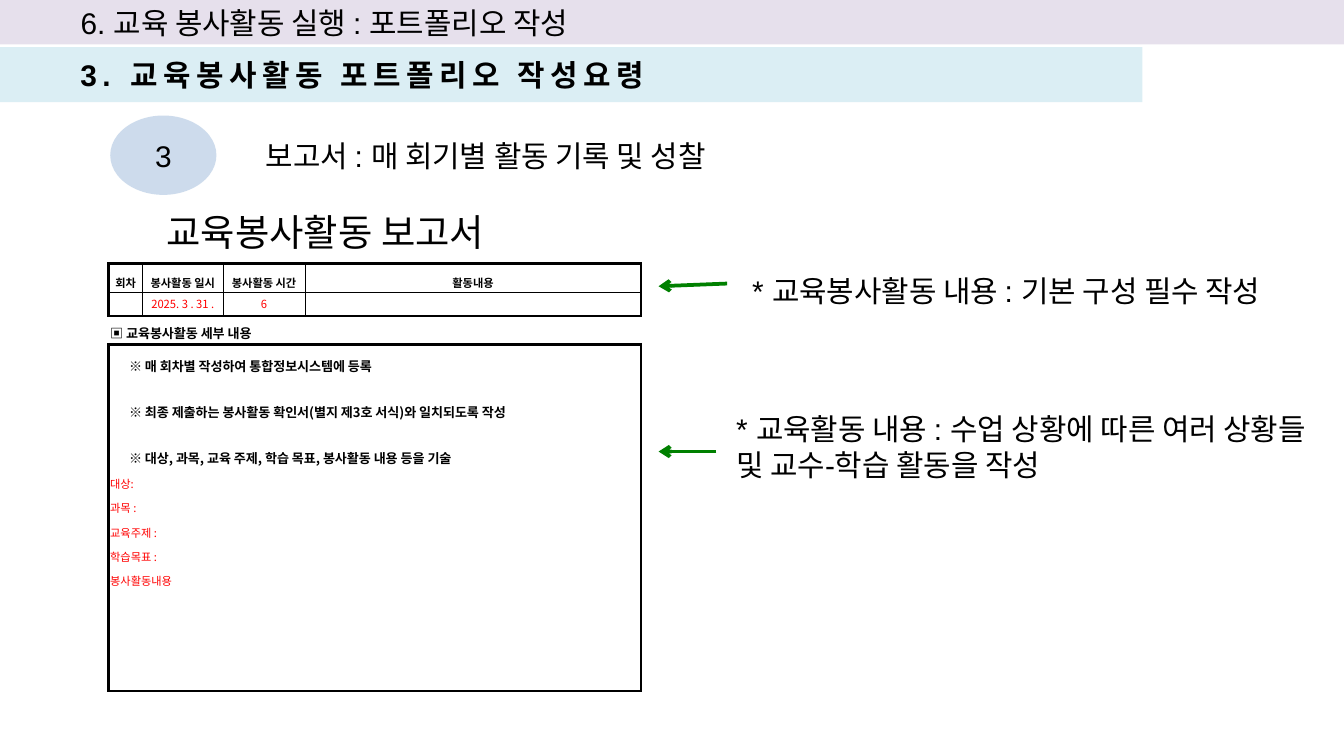
from lxml.etree import SubElement
from pptx import Presentation
from pptx.dml.color import RGBColor
from pptx.enum.shapes import MSO_CONNECTOR, MSO_SHAPE
from pptx.enum.text import MSO_ANCHOR, MSO_AUTO_SIZE, PP_ALIGN
from pptx.oxml.ns import qn
from pptx.util import Inches, Pt

BLACK, RED, GREEN = "000000", "FF0000", "008000"
KOREAN = "Noto Sans CJK KR"
THICK, THIN = 1.7, 0.28


def color(value):
    return RGBColor.from_string(value)


class SlideBuilder:
    def __init__(self, presentation, latin="Arial"):
        self.latin = latin
        self.slide = presentation.slides.add_slide(presentation.slide_layouts[5])

    def format_paragraph(self, paragraph, size, font=None, shade=BLACK, bold=False,
                         align=PP_ALIGN.LEFT, indent=0, first_line=0,
                         line_spacing=1.0, before=0, tracking=0):
        paragraph.alignment = align
        paragraph.line_spacing = line_spacing
        paragraph.space_before = Pt(before)
        paragraph.font.name = font or self.latin
        paragraph.font.size = Pt(size)
        paragraph.font.bold = bold
        paragraph.font.color.rgb = color(shade)
        properties = paragraph._p.get_or_add_pPr()
        properties.set("marL", str(Inches(indent)))
        properties.set("indent", str(Inches(first_line)))
        if tracking:
            properties.find(qn("a:defRPr")).set("spc", str(tracking * 100))

    def fill_text(self, shape, text, size=16, **style):
        frame = shape.text_frame
        frame.word_wrap = True
        frame.auto_size = MSO_AUTO_SIZE.NONE
        frame.vertical_anchor = MSO_ANCHOR.MIDDLE
        frame.text = text
        self.format_paragraph(frame.paragraphs[0], size, **style)

    def title(self, box, text, fill, **style):
        shape = self.slide.shapes.title
        shape.left, shape.top, shape.width, shape.height = map(Inches, box)
        shape.fill.solid()
        shape.fill.fore_color.rgb = color(fill)
        self.fill_text(shape, text, **style)

    def shape(self, kind, box, text, fill=None, opacity=100, **style):
        shape = self.slide.shapes.add_shape(kind, *map(Inches, box))
        shape.shadow.inherit = False
        shape.line.fill.background()
        if fill:
            shape.fill.solid()
            shape.fill.fore_color.rgb = color(fill)
            if opacity < 100:
                tint = shape.fill._xPr.find(".//" + qn("a:srgbClr"))
                SubElement(tint, qn("a:alpha"), val=str(opacity * 1000))
        else:
            shape.fill.background()
        self.fill_text(shape, text, **style)

    def text_box(self, box, text, **style):
        shape = self.slide.shapes.add_textbox(*map(Inches, box))
        self.fill_text(shape, text, **style)

    def arrow(self, start, end):
        line = self.slide.shapes.add_connector(
            MSO_CONNECTOR.STRAIGHT, *map(Inches, start + end))
        line.line.color.rgb = color(GREEN)
        line.line.width = Pt(2)
        SubElement(line.line._get_or_add_ln(), qn("a:tailEnd"), type="arrow")
        SubElement(line._element.spPr, qn("a:effectLst"))

    def table(self, left, top, columns, rows):
        table = self.slide.shapes.add_table(
            len(rows), len(columns), Inches(left), Inches(top),
            Inches(sum(columns)), Inches(sum(rows))).table
        table.first_row = table.horz_banding = False
        for column, width in zip(table.columns, columns):
            column.width = Inches(width)
        for row, height in zip(table.rows, rows):
            row.height = Inches(height)
        return table

    def cell(self, cell, borders, lines=(), anchor=MSO_ANCHOR.MIDDLE):
        """Borders are widths in points for left, right, top, bottom; lines are (text, style)."""
        cell.margin_left = cell.margin_right = Inches(0.01)
        cell.margin_top = cell.margin_bottom = Inches(0.01)
        cell.vertical_anchor = anchor
        properties = cell._tc.get_or_add_tcPr()
        for side, width in zip("LRTB", borders):
            edge = SubElement(properties, qn("a:ln" + side), w=str(Pt(width)))
            if width:
                fill = SubElement(edge, qn("a:solidFill"))
                SubElement(fill, qn("a:srgbClr"), val=BLACK)
            else:
                SubElement(edge, qn("a:noFill"))
        cell.fill.background()
        frame = cell.text_frame
        if not lines:
            SubElement(frame.paragraphs[0]._p, qn("a:endParaRPr"), sz="600")
            return
        frame.text = "\n".join(text for text, _ in lines)
        for paragraph, (_, style) in zip(frame.paragraphs, lines):
            self.format_paragraph(paragraph, font=KOREAN, **style)


def add_report_table(builder):
    heading = dict(size=6, bold=True, align=PP_ALIGN.CENTER, line_spacing=1.6)
    entry = dict(size=6, shade=RED, align=PP_ALIGN.CENTER)
    section = dict(size=7, bold=True, align=PP_ALIGN.JUSTIFY, line_spacing=1.3)
    note = dict(size=7, bold=True, align=PP_ALIGN.JUSTIFY, first_line=0.14,
                line_spacing=1.6, before=8.5)
    field = dict(size=6, shade=RED, align=PP_ALIGN.JUSTIFY, line_spacing=1.5)

    notes = ["※ 매 회차별 작성하여 통합정보시스템에 등록",
             "※ 최종 제출하는 봉사활동 확인서(별지 제3호 서식)와 일치되도록 작성",
             "※ 대상, 과목, 교육 주제, 학습 목표, 봉사활동 내용 등을 기술"]
    fields = ["대상: ", "과목 :", "교육주제 : ", "학습목표 :", "봉사활동내용"]
    details = [(text, note) for text in notes] + [(text, field) for text in fields]
    headings = ["회차", "봉사활동 일시", "봉사활동 시간", "활동내용"]
    entries = ["", "2025. 3 . 31 .", "6", ""]

    table = builder.table(0.81, 1.96, [0.25, 0.6, 0.61, 2.5], [0.17, 0.18, 0.21, 2.58])
    for row in (2, 3):
        table.cell(row, 0).merge(table.cell(row, 3))
    for column in range(4):
        first, last = column == 0, column == 3
        sides = (THICK if first else THIN, THICK if last else THIN)
        builder.cell(table.cell(0, column), sides + (THICK, THIN),
                     [(headings[column], heading)])
        builder.cell(table.cell(1, column), sides + (THIN, THICK),
                     [(entries[column], entry)] if entries[column] else ())
        builder.cell(table.cell(2, column), (0, 0, THICK, THICK),
                     [("▣ 교육봉사활동 세부 내용", section)] if first else ())
        builder.cell(table.cell(3, column), (THICK,) * 4,
                     details if first else (), MSO_ANCHOR.TOP)


def main():
    presentation = Presentation()
    presentation.slide_width = Inches(10)
    presentation.slide_height = presentation.slide_width * 9 // 16
    builder = SlideBuilder(presentation)
    bar = dict(align=PP_ALIGN.JUSTIFY, indent=0.5)
    builder.title((0, 0, 10, 0.33), "6. 교육 봉사활동 실행 : 포트폴리오 작성 ", "E6E0EC", **bar)
    builder.shape(MSO_SHAPE.RECTANGLE, (0, 0.35, 8.5, 0.41),
                  "3. 교육봉사활동 포트폴리오 작성요령", "DBEEF4", bold=True, tracking=3, **bar)
    for box, text in [
        ((1.85, 0.86, 7.48, 0.59), "보고서 : 매 회기별 활동 기록 및 성찰"),
        ((5.47, 1.87, 4.96, 0.59), "* 교육봉사활동 내용 : 기본 구성 필수 작성"),
        ((5.35, 3.03, 4.65, 0.59),
         "* 교육활동 내용 : 수업 상황에 따른 여러 상황들 및 교수-학습 활동을 작성"),
    ]:
        builder.shape(MSO_SHAPE.ROUNDED_RECTANGLE, box, text)
    builder.shape(MSO_SHAPE.OVAL, (0.82, 0.86, 0.79, 0.59), "3", "B9CDE5", 70,
                  align=PP_ALIGN.CENTER)
    builder.arrow((5.41, 2.11), (4.9, 2.13))
    builder.arrow((5.33, 3.36), (4.9, 3.36))
    builder.text_box((1.14, 1.47, 3.5, 0.5), "교육봉사활동 보고서", size=20, font=KOREAN)
    add_report_table(builder)
    presentation.save("out.pptx")


if __name__ == "__main__":
    main()
